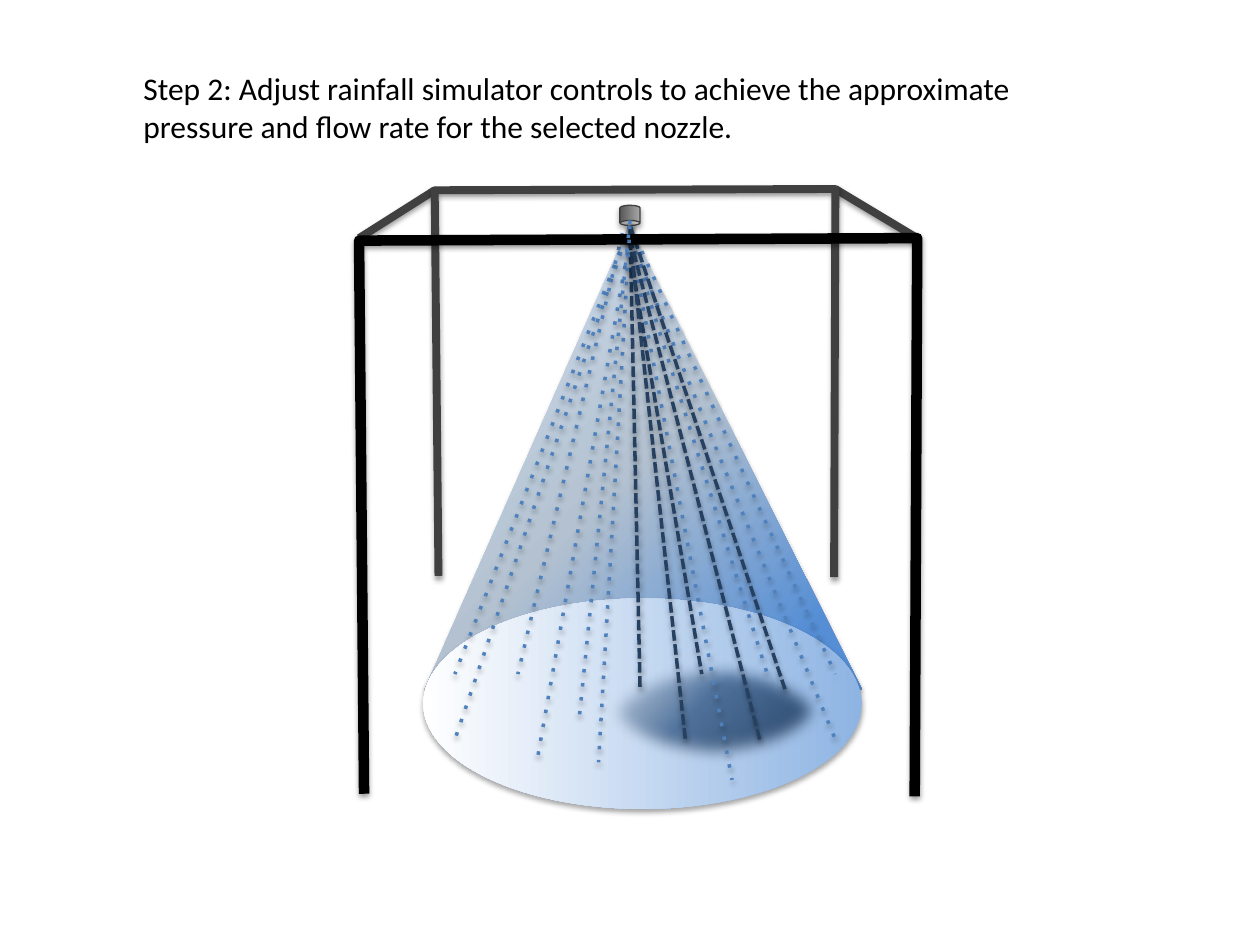
from dataclasses import dataclass
from typing import Optional

from lxml import etree
from pptx import Presentation
from pptx.dml.color import RGBColor
from pptx.enum.shapes import MSO_CONNECTOR, MSO_SHAPE
from pptx.enum.text import MSO_AUTO_SIZE
from pptx.oxml import parse_xml
from pptx.oxml.ns import nsdecls, qn
from pptx.util import Inches, Pt

TRIANGLE = MSO_SHAPE.ISOSCELES_TRIANGLE
ELLIPSE = MSO_SHAPE.OVAL
CAN = MSO_SHAPE.CAN
STRAIGHT = MSO_CONNECTOR.STRAIGHT
FIT_TEXT = MSO_AUTO_SIZE.SHAPE_TO_FIT_TEXT

SLIDE_WIDTH, SLIDE_HEIGHT = Inches(10), Inches(7.5)
COLUMNS, ROWS = 10, 7.5
BLANK_LAYOUT = 6
FONT = "Calibri"
COLORS = {
    "text": "000000",
    "shadow": "000000",
    "front": "000000",
    "back": "404040",
    "drop": "4F81BD",
    "heavy_drop": "254061",
}
LINEAR = '<a:lin ang="{}" scaled="0"/>'
RADIAL = '<a:path path="circle"><a:fillToRect {}/></a:path>'
TO_BOTTOM_RIGHT = RADIAL.format('l="100000" t="100000"')
TO_TOP_LEFT = RADIAL.format('r="100000" b="100000"')

Point = tuple[float, float]
Stop = tuple[int, str, int]


@dataclass(frozen=True)
class Solid:
    kind: int
    box: tuple[float, float, float, float]
    stops: tuple[Stop, ...]
    direction: str
    adjustment: Optional[float] = None
    outline: Optional[str] = None
    flipped: bool = False
    soft_edge: float = 0


@dataclass(frozen=True)
class Line:
    start: Point
    end: Point
    color: str = "drop"
    width: float = 2
    dash: Optional[str] = "dot"


@dataclass(frozen=True)
class Frame:
    corners: tuple[Point, ...]
    color: str
    width: float


def column(value: float) -> int:
    return round(value * SLIDE_WIDTH / COLUMNS)


def row(value: float) -> int:
    return round(value * SLIDE_HEIGHT / ROWS)


def add_effects(shape, alpha: int, distance: float, soft_edge: float = 0) -> None:
    soft = f'<a:softEdge rad="{Pt(soft_edge)}"/>' if soft_edge else ""
    shape._element.spPr.append(parse_xml(
        f'<a:effectLst {nsdecls("a")}><a:outerShdw blurRad="{Pt(3.1)}" '
        f'dist="{Pt(distance)}" dir="5400000" rotWithShape="0">'
        f'<a:srgbClr val="{COLORS["shadow"]}"><a:alpha val="{alpha * 1000}"/></a:srgbClr>'
        f'</a:outerShdw>{soft}</a:effectLst>'))


def set_line(shape, color: str, width: float, dash: Optional[str] = None) -> None:
    shape.line.color.rgb = RGBColor.from_string(COLORS[color])
    shape.line.width = Pt(width)
    if dash:
        outline = shape._element.spPr.find(qn("a:ln"))
        etree.SubElement(outline, qn("a:prstDash")).set("val", dash)


def set_gradient(shape, stops: tuple[Stop, ...], direction: str) -> None:
    shape.fill.background()
    marks = "".join(
        f'<a:gs pos="{position * 1000}"><a:srgbClr val="{color}">'
        f'<a:alpha val="{alpha * 1000}"/></a:srgbClr></a:gs>'
        for position, color, alpha in stops)
    properties = shape._element.spPr
    properties.replace(properties.find(qn("a:noFill")), parse_xml(
        f'<a:gradFill {nsdecls("a")} rotWithShape="1">'
        f'<a:gsLst>{marks}</a:gsLst>{direction}</a:gradFill>'))


def draw_solid(slide, solid: Solid) -> None:
    left, top, width, height = solid.box
    shape = slide.shapes.add_shape(
        solid.kind, column(left), row(top), column(width), row(height))
    if solid.adjustment is not None:
        shape.adjustments[0] = solid.adjustment
    set_gradient(shape, solid.stops, solid.direction)
    if solid.outline:
        set_line(shape, solid.outline, 0.75)
    else:
        shape.line.fill.background()
    if solid.flipped:
        shape._element.spPr.find(qn("a:xfrm")).set("flipV", "1")
    add_effects(shape, 35, 1.8, solid.soft_edge)


def draw_line(slide, line: Line) -> None:
    connector = slide.shapes.add_connector(
        STRAIGHT, column(line.start[0]), row(line.start[1]),
        column(line.end[0]), row(line.end[1]))
    set_line(connector, line.color, line.width, line.dash)
    add_effects(connector, 38, 1.6)


def draw_frame(slide, frame: Frame) -> None:
    first, *others = [(column(x), row(y)) for x, y in frame.corners]
    builder = slide.shapes.build_freeform(*first)
    builder.add_line_segments(others, close=False)
    shape = builder.convert_to_shape()
    shape.fill.background()
    set_line(shape, frame.color, frame.width)
    add_effects(shape, 38, 1.6)


def add_text(slide, text: str, *, left: float, top: float, width: float,
             height: float, size: float, color: str) -> None:
    box = slide.shapes.add_textbox(column(left), row(top), column(width), row(height))
    box.text_frame.word_wrap = True
    box.text_frame.auto_size = FIT_TEXT
    run = box.text_frame.paragraphs[0].add_run()
    run.text = text
    run.font.name = FONT
    run.font.size = Pt(size)
    run.font.color.rgb = RGBColor.from_string(COLORS[color])


NOZZLE, SPRAY = (5, 1.79), (5, 1.89)
SCENE = (
    Solid(TRIANGLE, (3.37, 1.79, 3.47, 3.68),
          ((12, "558ED5", 100), (50, "B3C1D0", 100), (100, "D5E5F7", 100)),
          TO_BOTTOM_RIGHT, adjustment=0.468),
    Solid(ELLIPSE, (3.36, 4.75, 3.48, 1.67),
          ((0, "8EB4E3", 100), (100, "FFFFFF", 100)), LINEAR.format(10800000)),
    Solid(ELLIPSE, (4.75, 5.21, 1.84, 0.85),
          ((0, "B9CDE5", 11), (44, "376092", 70), (79, "17375E", 70), (100, "95B3D7", 70)),
          TO_TOP_LEFT, soft_edge=8.86),
    Line((2.85, 1.89), (3.45, 1.51), "back", 4.5, None),
    Line((7.28, 1.89), (6.63, 1.5), "back", 4.5, None),
    Solid(CAN, (4.92, 1.63, 0.16, 0.16),
          ((0, "595959", 100), (100, "A6A6A6", 100)), LINEAR.format(0),
          outline="back", flipped=True),
    Frame(((3.48, 4.57), (3.45, 1.51), (6.63, 1.5), (6.62, 4.58)), "back", 4.5),
    Line(NOZZLE, (3.61, 5.35)),
    Line(NOZZLE, (3.61, 5.87)),
    Line(SPRAY, (6.63, 5.87)),
    Line((4.94, 1.85), (4.11, 5.35)),
    Line(NOZZLE, (6.63, 5.35)),
    Line(SPRAY, (6.09, 5.35)),
    Line(NOZZLE, (5.08, 5.47), "heavy_drop", dash="sysDash"),
    Line(SPRAY, (5.81, 6.19)),
    Line((5, 2.01), (5.57, 5.35), "heavy_drop", dash="sysDash"),
    Line(SPRAY, (4.26, 6.05)),
    Line(SPRAY, (5.44, 5.87), "heavy_drop", dash="sysDash"),
    Line(SPRAY, (6.03, 5.87), "heavy_drop", dash="sysDash"),
    Line(NOZZLE, (6.23, 5.47), "heavy_drop", dash="sysDash"),
    Frame(((2.89, 6.3), (2.85, 1.91), (7.28, 1.89), (7.26, 6.32)), "front", 6),
    Line(NOZZLE, (4.75, 6.05)),
    Line((5, 1.75), (4.6, 5.67)),
)
DRAWERS = {Solid: draw_solid, Line: draw_line, Frame: draw_frame}


def main() -> None:
    presentation = Presentation()
    presentation.slide_width, presentation.slide_height = SLIDE_WIDTH, SLIDE_HEIGHT
    slide = presentation.slides.add_slide(presentation.slide_layouts[BLANK_LAYOUT])
    add_text(slide, "Step 2: Adjust rainfall simulator controls to achieve the approximate "
             "pressure and flow rate for the selected nozzle.",
             left=1.04, top=0.5, width=7.43, height=0.71, size=18, color="text")
    for item in SCENE:
        DRAWERS[type(item)](slide, item)
    presentation.save("out.pptx")


if __name__ == "__main__":
    main()
